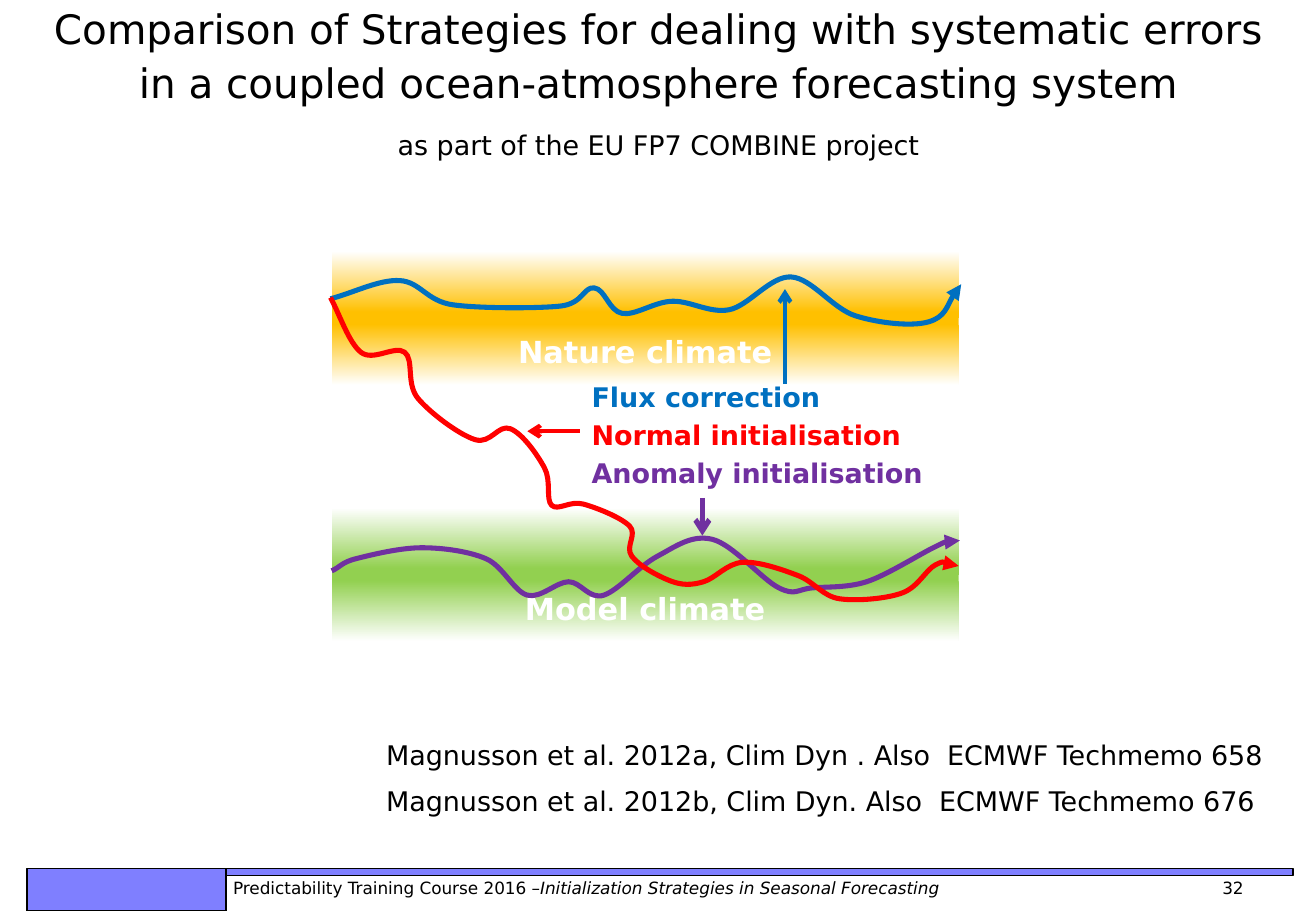
from dataclasses import dataclass

from lxml.etree import SubElement
from pptx import Presentation
from pptx.dml.color import RGBColor
from pptx.enum.shapes import MSO_CONNECTOR, MSO_SHAPE
from pptx.enum.text import MSO_ANCHOR, MSO_AUTO_SIZE, PP_ALIGN
from pptx.oxml.ns import qn
from pptx.shapes.autoshape import Shape
from pptx.slide import Slide
from pptx.text.text import Font
from pptx.util import Inches, Pt

FONT_NAME = "DejaVu Sans"
BLACK = RGBColor(0x00, 0x00, 0x00)
WHITE = RGBColor(0xFF, 0xFF, 0xFF)
FOOTER_BLUE = RGBColor(0x00, 0x00, 0xFF)
ORANGE = RGBColor(0xFF, 0xC0, 0x00)
GREEN = RGBColor(0x92, 0xD0, 0x50)
BLUE = RGBColor(0x00, 0x70, 0xC0)
RED = RGBColor(0xFF, 0x00, 0x00)
PURPLE = RGBColor(0x70, 0x30, 0xA0)

BAND_LEFT, BAND_WIDTH, BAND_HALF = 2.73, 5.16, 0.55
LABEL_LEFT, LABEL_HEIGHT = 4.77, 0.37

Point = tuple[int, int]


@dataclass(frozen=True)
class ClimateBand:
    text: str
    top: float
    color: RGBColor


@dataclass(frozen=True)
class Trajectory:
    """Knots of a smooth curve, in hundredths of an inch."""
    color: RGBColor
    knots: tuple[Point, ...]


@dataclass(frozen=True)
class Strategy:
    text: str
    top: float
    width: float
    color: RGBColor
    arrow_start: tuple[float, float]
    arrow_end: tuple[float, float]
    arrow_weight: float


BANDS = (ClimateBand("Nature climate", 2.07, ORANGE), ClimateBand("Model climate", 4.18, GREEN))

TRAJECTORIES = (
    Trajectory(PURPLE, (
        (273, 470), (293, 460), (347, 451), (400, 460), (434, 490), (468, 479), (497, 490),
        (541, 458), (586, 444), (641, 484), (669, 484), (716, 478), (768, 451), (786, 444),
        (790, 445))),
    Trajectory(BLUE, (
        (272, 246), (329, 231), (373, 251), (461, 252), (489, 237), (512, 258), (554, 248),
        (600, 255), (651, 228), (704, 260), (764, 265), (791, 234))),
    Trajectory(RED, (
        (272, 245), (297, 290), (333, 290), (344, 328), (391, 362), (420, 353), (448, 385),
        (454, 416), (480, 415), (518, 433), (520, 458), (551, 478), (579, 479), (611, 463),
        (657, 474), (691, 493), (743, 488), (770, 465), (789, 466))),
)

STRATEGIES = (
    Strategy("Flux correction", 3.08, 2.09, BLUE, (6.46, 3.16), (6.46, 2.38), 2.5),
    Strategy("Normal initialisation", 3.4, 2.77, RED, (4.77, 3.55), (4.34, 3.55), 2.5),
    Strategy("Anomaly initialisation", 3.71, 2.95, PURPLE, (5.78, 4.1), (5.78, 4.41), 3),
)


def style_font(font: Font, size: float, color: RGBColor, bold: bool = False) -> None:
    font.name, font.size, font.bold = FONT_NAME, Pt(size), bold
    font.color.rgb = color


def add_rectangle(slide: Slide, left: float, top: float, width: float, height: float) -> Shape:
    shape = slide.shapes.add_shape(
        MSO_SHAPE.RECTANGLE, Inches(left), Inches(top), Inches(width), Inches(height))
    shape.shadow.inherit = False
    return shape


def add_text(slide: Slide, left: float, top: float, width: float, height: float,
             lines: tuple[str, ...], size: float, color: RGBColor = BLACK,
             bold: bool = False, wrap: bool = True) -> Shape:
    box = slide.shapes.add_textbox(Inches(left), Inches(top), Inches(width), Inches(height))
    frame = box.text_frame
    frame.word_wrap = wrap
    frame.auto_size = MSO_AUTO_SIZE.SHAPE_TO_FIT_TEXT
    frame.text = "\n".join(lines)
    for index, paragraph in enumerate(frame.paragraphs):
        if index:
            paragraph.space_before = Pt(size / 2)
        for run in paragraph.runs:
            style_font(run.font, size, color, bold)
    return box


def style_arrow(shape, color: RGBColor, weight: float, head: str) -> None:
    shape.line.color.rgb = color
    shape.line.width = Pt(weight)
    SubElement(shape.line._get_or_add_ln(), qn("a:tailEnd"), type=head)


def add_footer(slide: Slide) -> None:
    for bounds in ((0.22, 7.15, 1.64, 0.35), (1.86, 7.15, 8.78, 0.06)):
        bar = add_rectangle(slide, *bounds)
        bar.fill.solid()
        bar.fill.fore_color.rgb = FOOTER_BLUE
        color = next(bar._element.spPr.iter(qn("a:srgbClr")))
        SubElement(color, qn("a:alpha"), val="50000")
        bar.line.color.rgb = BLACK
        bar.line.width = Pt(1)
    box = add_text(slide, 1.82, 7.18, 9.01, 0.27, ("Predictability Training Course 2016 –",), 10)
    paragraph = box.text_frame.paragraphs[0]
    tabs = SubElement(paragraph._p.get_or_add_pPr(), qn("a:tabLst"))
    SubElement(tabs, qn("a:tab"), pos=str(Inches(8.14)), algn="l")
    for text, italic in (("Initialization Strategies in Seasonal Forecasting", True), ("\t32", False)):
        run = paragraph.add_run()
        run.text = text
        style_font(run.font, 10, BLACK)
        run.font.italic = italic


def add_title(slide: Slide) -> None:
    title = slide.shapes.title
    title.left, title.top, title.width, title.height = (
        Inches(value) for value in (0.29, 0, 10.26, 1.31))
    frame = title.text_frame
    frame.text = ("Comparison of Strategies for dealing with systematic errors in a coupled "
                  "ocean-atmosphere forecasting system\vas part of the EU FP7 COMBINE project")
    frame.word_wrap = True
    frame.auto_size = MSO_AUTO_SIZE.NONE
    frame.vertical_anchor = MSO_ANCHOR.MIDDLE
    paragraph = frame.paragraphs[0]
    paragraph.alignment = PP_ALIGN.CENTER
    paragraph.line_spacing = Pt(32)
    for run, size in zip(paragraph.runs, (24, 16)):
        style_font(run.font, size, BLACK)


def add_band(slide: Slide, band: ClimateBand) -> None:
    lower = add_rectangle(slide, BAND_LEFT, band.top + BAND_HALF, BAND_WIDTH, BAND_HALF)
    upper = add_rectangle(slide, BAND_LEFT, band.top, BAND_WIDTH, BAND_HALF)
    upper.rotation = 180
    for half in (lower, upper):
        half.line.fill.background()
        half.fill.gradient()
        half.fill.gradient_angle = 270
        for stop, position, color in zip(half.fill.gradient_stops, (0.09, 1), (band.color, WHITE)):
            stop.position = position
            stop.color.rgb = color
    lower.text_frame.text = band.text
    lower.text_frame.vertical_anchor = MSO_ANCHOR.MIDDLE
    paragraph = lower.text_frame.paragraphs[0]
    paragraph.alignment = PP_ALIGN.CENTER
    style_font(paragraph.runs[0].font, 18, WHITE, bold=True)


def extend(end: Point, neighbour: Point) -> Point:
    """Mirror the neighbour about the end of the curve."""
    return 2 * end[0] - neighbour[0], 2 * end[1] - neighbour[1]


def handle(knot: Point, before: Point, after: Point, side: int) -> Point:
    """Bézier handle parallel to the chord between the neighbouring knots."""
    return (round(knot[0] + side * (after[0] - before[0]) / 6),
            round(knot[1] + side * (after[1] - before[1]) / 6))


def add_trajectory(slide: Slide, trajectory: Trajectory) -> None:
    knots = trajectory.knots
    padded = (extend(knots[0], knots[1]), *knots, extend(knots[-1], knots[-2]))
    points: list[Point] = []
    for before, start, end, after in zip(padded, padded[1:], padded[2:], padded[3:]):
        points += [handle(start, before, end, 1), handle(end, start, after, -1), end]
    builder = slide.shapes.build_freeform(*knots[0], scale=Inches(0.01))
    builder.add_line_segments(points, close=False)
    shape = builder.convert_to_shape()
    # Join every three points into one Bézier curve
    path = next(shape._element.iter(qn("a:path")))
    segments = path.findall(qn("a:lnTo"))
    for index in range(0, len(segments), 3):
        curve = SubElement(path, qn("a:cubicBezTo"))
        for segment in segments[index:index + 3]:
            curve.append(segment[0])
            path.remove(segment)
    shape.fill.background()
    shape.shadow.inherit = False
    style_arrow(shape, trajectory.color, 3, "triangle")


def add_strategy(slide: Slide, strategy: Strategy) -> None:
    add_text(slide, LABEL_LEFT, strategy.top, strategy.width, LABEL_HEIGHT,
             (strategy.text,), 16, strategy.color, bold=True, wrap=False)
    ends = (Inches(value) for value in strategy.arrow_start + strategy.arrow_end)
    arrow = slide.shapes.add_connector(MSO_CONNECTOR.STRAIGHT, *ends)
    style_arrow(arrow, strategy.color, strategy.arrow_weight, "arrow")
    SubElement(arrow._element.spPr, qn("a:effectLst"))


def build_slide(presentation) -> None:
    slide = presentation.slides.add_slide(presentation.slide_layouts[5])
    add_footer(slide)
    add_title(slide)
    # Climate diagram
    for band in BANDS:
        add_band(slide, band)
    for trajectory in TRAJECTORIES:
        add_trajectory(slide, trajectory)
    for strategy in STRATEGIES:
        add_strategy(slide, strategy)
    # References
    add_text(slide, 3.08, 6.03, 7.56, 0.77, (
        "Magnusson et al. 2012a, Clim Dyn . Also  ECMWF Techmemo 658",
        "Magnusson et al. 2012b, Clim Dyn. Also  ECMWF Techmemo 676"), 16)


if __name__ == "__main__":
    deck = Presentation()
    deck.slide_width, deck.slide_height = Inches(10.83), Inches(7.5)
    build_slide(deck)
    deck.save("out.pptx")
